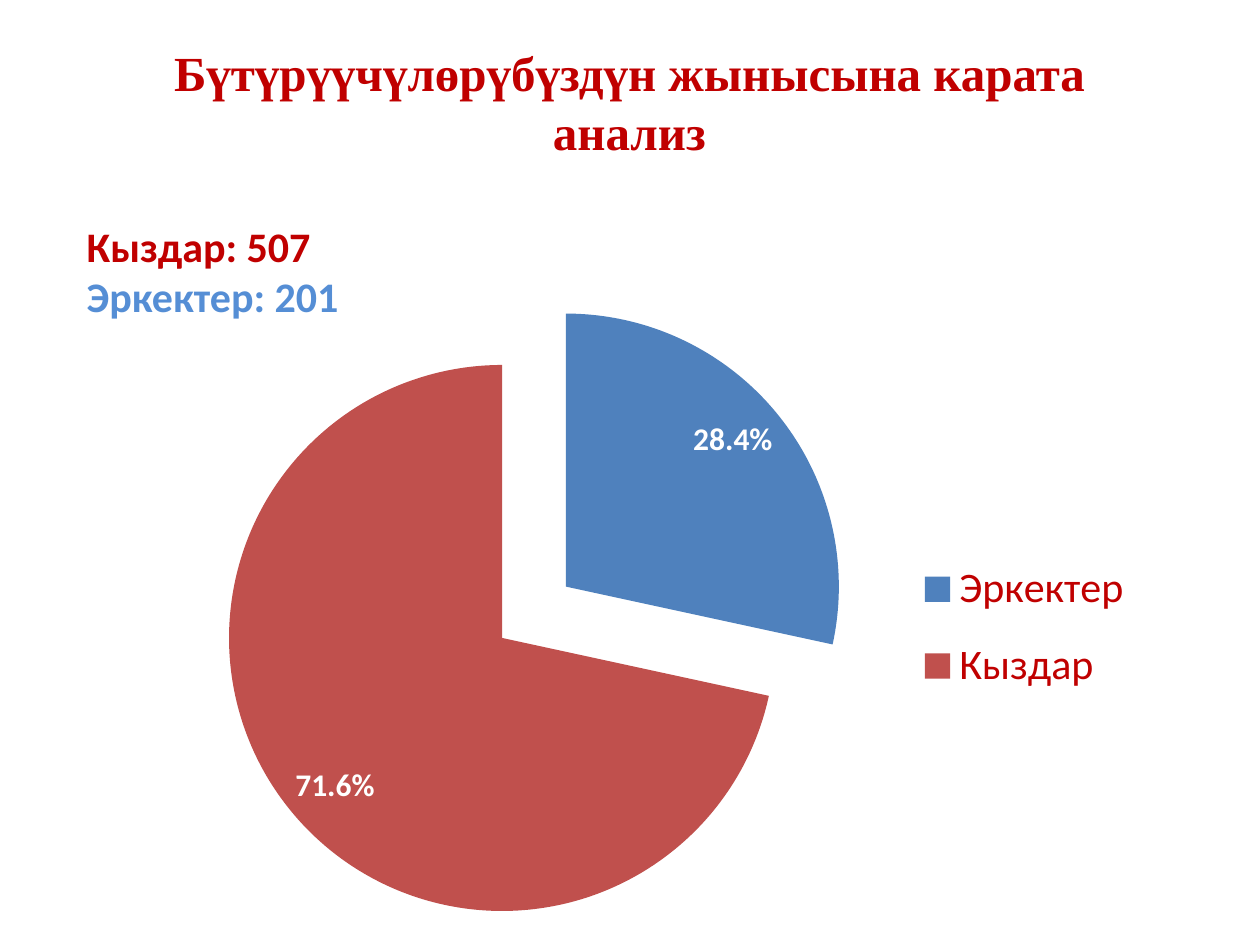
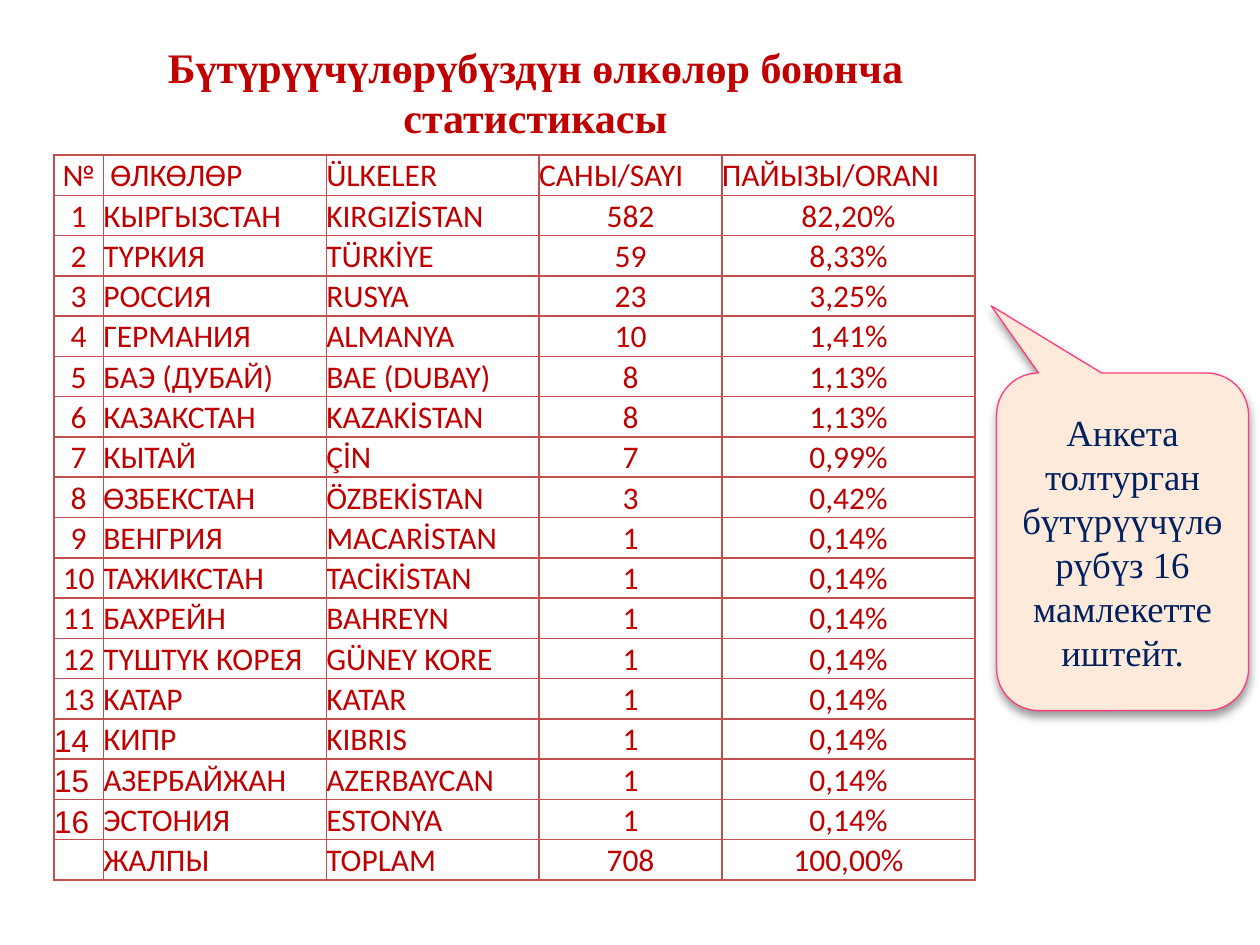
from dataclasses import dataclass

from pptx import Presentation
from pptx.chart.data import CategoryChartData
from pptx.dml.color import RGBColor
from pptx.enum.chart import XL_CHART_TYPE as ChartType
from pptx.enum.chart import XL_LABEL_POSITION as LabelPos
from pptx.enum.chart import XL_LEGEND_POSITION as LegendPos
from pptx.enum.shapes import MSO_SHAPE as Shape
from pptx.enum.text import MSO_ANCHOR as Anchor
from pptx.enum.text import MSO_AUTO_SIZE as AutoSize
from pptx.enum.text import PP_ALIGN as Align
from pptx.oxml import parse_xml
from pptx.oxml.ns import nsdecls
from pptx.util import Inches, Pt


@dataclass(frozen=True)
class Theme:
    red: str = "C00000"
    light_blue: str = "558ED5"
    navy: str = "002060"
    white: str = "FFFFFF"
    pie_blue: str = "4F81BD"
    pie_red: str = "C0504D"
    callout_fill: str = "FDEADA"
    callout_line: str = "FF3B7C"
    heading_font: str = "Times New Roman"
    body_font: str = "Calibri"
    number_font: str = "Arial"
    title_size: int = 28
    large_size: int = 24
    callout_size: int = 21
    body_size: int = 18


@dataclass(frozen=True)
class Box:
    left: float
    top: float
    width: float
    height: float

    def emu(self) -> tuple:
        return tuple(Inches(v) for v in (self.left, self.top, self.width, self.height))


@dataclass(frozen=True)
class TextStyle:
    font: str
    size: int
    color: str
    bold: bool = False


T = Theme()
CELL = TextStyle(T.body_font, T.body_size, T.red)
CELL_ARIAL = TextStyle(T.number_font, T.body_size, T.red)

COLUMN_WIDTHS = (0.39, 1.77, 1.69, 1.45, 2.01)
ROW_HEIGHT = 0.32
HEADER = ("№", " ӨЛКӨЛӨР", "ÜLKELER", "САНЫ/SAYI", "ПАЙЫЗЫ/ORANI")
COUNTRIES = (
    ("КЫРГЫЗСТАН", "KIRGIZİSTAN", "582", "82,20%"),
    ("ТҮРКИЯ", "TÜRKİYE", "59", "8,33%"),
    ("РОССИЯ", "RUSYA", "23", "3,25%"),
    ("ГЕРМАНИЯ", "ALMANYA", "10", "1,41%"),
    ("БАЭ (ДУБАЙ)", "BAE (DUBAY)", "8", "1,13%"),
    ("КАЗАКСТАН", "KAZAKİSTAN", "8", "1,13%"),
    ("КЫТАЙ", "ÇİN", "7", "0,99%"),
    ("ӨЗБЕКСТАН", "ÖZBEKİSTAN", "3", "0,42%"),
    ("ВЕНГРИЯ", "MACARİSTAN", "1", "0,14%"),
    ("ТАЖИКСТАН", "TACİKİSTAN", "1", "0,14%"),
    ("БАХРЕЙН", "BAHREYN", "1", "0,14%"),
    ("ТҮШТҮК КОРЕЯ", "GÜNEY KORE", "1", "0,14%"),
    ("KATAP", "KATAR", "1", "0,14%"),
    ("КИПР", "KIBRIS", "1", "0,14%"),
    ("АЗЕРБАЙЖАН", "AZERBAYCAN", "1", "0,14%"),
    ("ЭСТОНИЯ", "ESTONYA", "1", "0,14%"),
)
TOTAL = ("", "ЖАЛПЫ", "TOPLAM", "708", "100,00%")
FIRST_ARIAL_NUMBER = 14


def rgb(color: str) -> RGBColor:
    return RGBColor.from_string(color)


def style_font(font, style: TextStyle) -> None:
    font.name, font.size, font.bold = style.font, Pt(style.size), style.bold
    font.color.rgb = rgb(style.color)


def add_run(p, text: str, style: TextStyle):
    r = p.add_run()
    r.text = text
    style_font(r.font, style)
    return r


def shadow_xml(blur: float, dist: float):
    return parse_xml(
        f'<a:effectLst {nsdecls("a")}><a:outerShdw blurRad="{Pt(blur)}" dist="{Pt(dist)}" '
        'dir="5400000" algn="ctr" rotWithShape="0"><a:srgbClr val="000000">'
        '<a:alpha val="40000"/></a:srgbClr></a:outerShdw></a:effectLst>')


def add_text_box(s, box: Box):
    tf = s.shapes.add_textbox(*box.emu()).text_frame
    tf.word_wrap = True
    tf.auto_size = AutoSize.SHAPE_TO_FIT_TEXT
    return tf


def add_title(s, text: str, box: Box, size: int) -> None:
    p = add_text_box(s, box).paragraphs[0]
    p.alignment = Align.CENTER
    add_run(p, text, TextStyle(T.heading_font, size, T.red, True))


def set_layout(parent, x: float, y: float, w: float, h: float, inner: bool = False) -> None:
    """Place a plot area or legend by fractions of the chart."""
    for old in parent.findall("{*}layout"):
        parent.remove(old)
    target = '<c:layoutTarget val="inner"/>' if inner else ""
    layout = parse_xml(
        f'<c:layout {nsdecls("c")}><c:manualLayout>{target}'
        '<c:xMode val="edge"/><c:yMode val="edge"/>'
        f'<c:x val="{x}"/><c:y val="{y}"/><c:w val="{w}"/><c:h val="{h}"/>'
        '</c:manualLayout></c:layout>')
    parent.insert(0 if inner else 1, layout)


def add_gender_pie(s, box: Box) -> None:
    data = CategoryChartData()
    data.categories = ["Эркектер", "Кыздар"]
    data.add_series("Series 1", (28.4, 71.6))
    chart = s.shapes.add_chart(ChartType.PIE, *box.emu(), data).chart
    chart.has_title = False
    style_font(chart.font, TextStyle(T.body_font, T.body_size, T.white))
    plot = chart.plots[0]
    plot.vary_by_categories = True

    # Slices, pulled apart
    series = plot.series[0]
    for i, color in enumerate((T.pie_blue, T.pie_red)):
        fill = series.points[i].format.fill
        fill.solid()
        fill.fore_color.rgb = rgb(color)
    first_point = series._element.find("{*}dPt")
    first_point.addprevious(parse_xml(f'<c:explosion {nsdecls("c")} val="15"/>'))

    # Percent labels
    plot.has_data_labels = True
    labels = plot.data_labels
    labels.show_percentage, labels.show_value = True, False
    labels.number_format, labels.number_format_is_linked = "0.0%", False
    labels.position = LabelPos.INSIDE_END
    style_font(labels.font, TextStyle(T.body_font, T.body_size, T.white, True))

    # Legend and plot placement
    chart.has_legend = True
    legend = chart.legend
    legend.position, legend.include_in_layout = LegendPos.RIGHT, False
    style_font(legend.font, TextStyle(T.body_font, T.large_size, T.red))
    set_layout(legend._element, 0.75, 0.39, 0.23, 0.27)
    set_layout(plot._element.getparent(), 0.075, 0.03, 0.617, 0.944, inner=True)


def add_totals(s, box: Box) -> None:
    tf = add_text_box(s, box)
    for i, (text, color) in enumerate((("Кыздар: 507", T.red), ("Эркектер: 201", T.light_blue))):
        p = tf.add_paragraph() if i else tf.paragraphs[0]
        r = add_run(p, text, TextStyle(T.body_font, T.large_size, color, True))
        r._r.rPr.find("{*}solidFill").addnext(shadow_xml(4, 3))


def add_callout(s, text: str, box: Box) -> None:
    sp = s.shapes.add_shape(Shape.ROUNDED_RECTANGULAR_CALLOUT, *box.emu())
    for i, value in enumerate((-0.522, -0.699, 0.167)):
        sp.adjustments[i] = value
    sp.fill.solid()
    sp.fill.fore_color.rgb = rgb(T.callout_fill)
    sp.line.color.rgb = rgb(T.callout_line)
    sp.line.width = Pt(0.75)
    sp._element.spPr.append(shadow_xml(5.2, 3))
    tf = sp.text_frame
    tf.word_wrap, tf.vertical_anchor = True, Anchor.MIDDLE
    p = tf.paragraphs[0]
    p.alignment = Align.CENTER
    add_run(p, text, TextStyle(T.heading_font, T.callout_size, T.navy))


def fill_cell(cell, text: str, style: TextStyle, centred: bool) -> None:
    cell.margin_left = cell.margin_right = cell.margin_top = cell.margin_bottom = 0
    cell.vertical_anchor = Anchor.BOTTOM
    cell.fill.background()
    p = cell.text_frame.paragraphs[0]
    p.alignment = Align.CENTER if centred else Align.LEFT
    if text:
        add_run(p, text, style)
    tc_pr = cell._tc.get_or_add_tcPr()
    for i, side in enumerate("LRTB"):
        tc_pr.insert(i, parse_xml(
            f'<a:ln{side} {nsdecls("a")} w="{Pt(1)}"><a:solidFill>'
            f'<a:srgbClr val="{T.pie_red}"/></a:solidFill></a:ln{side}>'))


def add_country_table(s, left: float, top: float) -> None:
    numbered = [(str(n), *row) for n, row in enumerate(COUNTRIES, 1)]
    rows = [HEADER, *numbered, TOTAL]
    box = Box(left, top, sum(COLUMN_WIDTHS), ROW_HEIGHT * len(rows))
    table = s.shapes.add_table(len(rows), len(HEADER), *box.emu()).table
    table.first_row = table.horz_banding = False
    for column, width in zip(table.columns, COLUMN_WIDTHS):
        column.width = Inches(width)
    for i, row in enumerate(rows):
        table.rows[i].height = Inches(ROW_HEIGHT)
        for j, text in enumerate(row):
            arial = j == 0 and FIRST_ARIAL_NUMBER <= i <= len(COUNTRIES)
            centred = (j == 0 and not arial) or (j > 2 and i > 0)
            fill_cell(table.cell(i, j), text, CELL_ARIAL if arial else CELL, centred)


def main() -> None:
    prs = Presentation()
    prs.slide_width, prs.slide_height = Inches(10), Inches(7.5)
    blank = prs.slide_layouts[6]

    # Graduates by gender
    s = prs.slides.add_slide(blank)
    add_gender_pie(s, Box(1.14, 2.21, 8.08, 5.28))
    add_totals(s, Box(0.59, 1.7, 5.33, 0.91))
    add_title(s, "Бүтүрүүчүлөрүбүздүн жынысына карата анализ",
              Box(0.94, 0.29, 8.11, 1.04), T.title_size)

    # Graduates by country
    s = prs.slides.add_slide(blank)
    add_callout(s, "Анкета толтурган бүтүрүүчүлөрүбүз 16 мамлекетте иштейт.",
                Box(7.91, 2.96, 2, 2.68))
    add_title(s, "Бүтүрүүчүлөрүбүздүн өлкөлөр боюнча статистикасы",
              Box(0.43, 0.28, 7.64, 0.91), T.large_size)
    add_country_table(s, 0.43, 1.23)

    prs.save("out.pptx")


if __name__ == "__main__":
    main()
